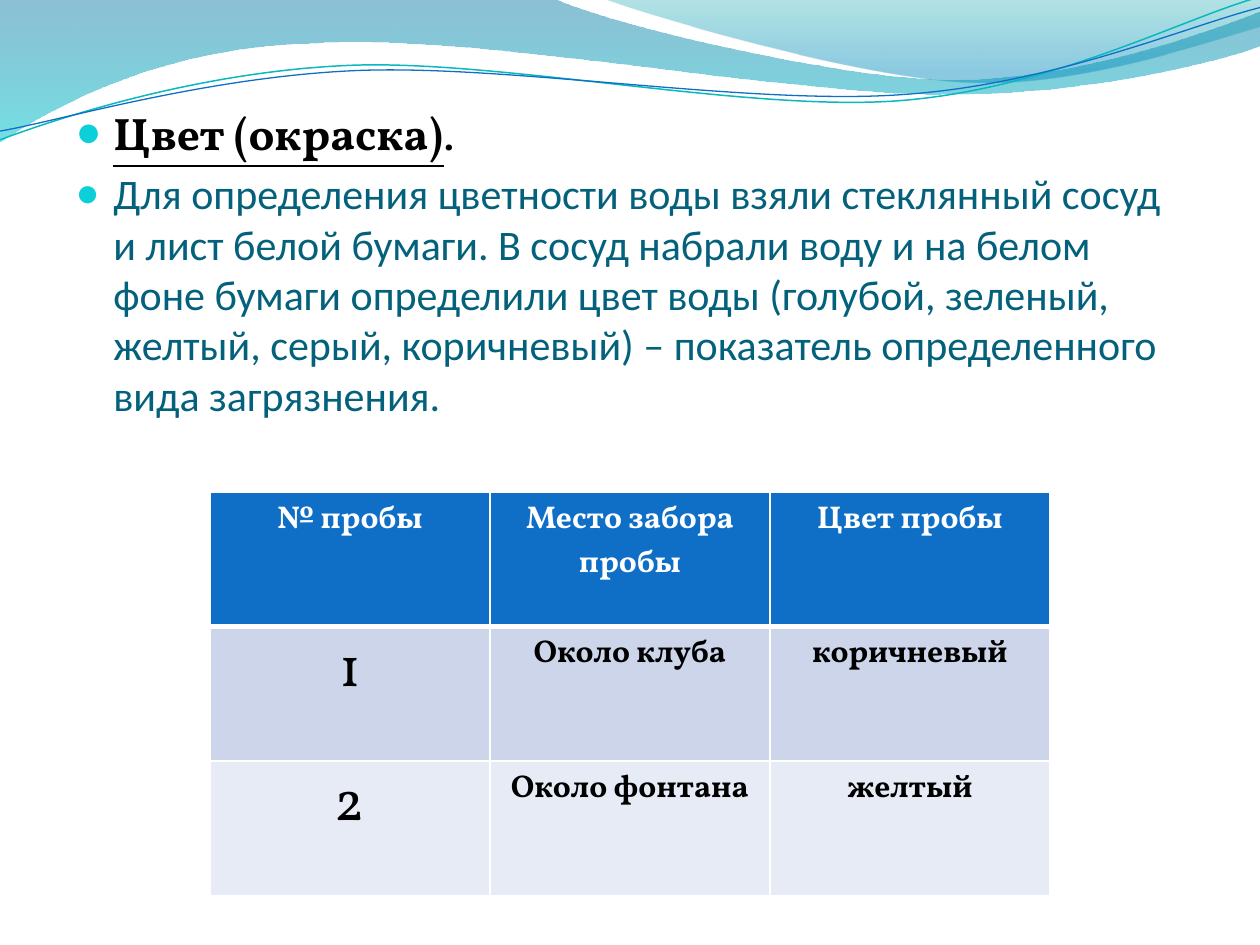
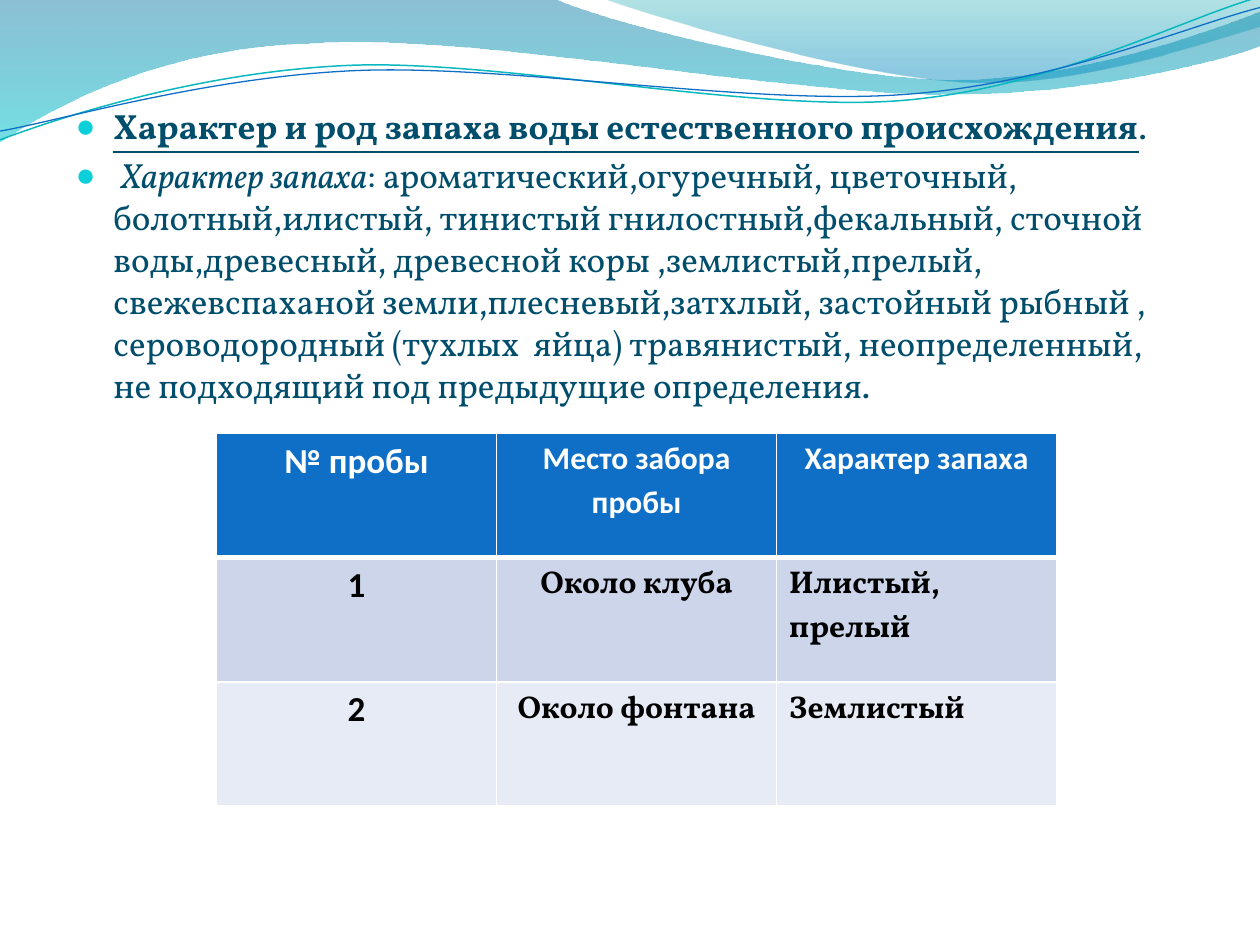
from dataclasses import dataclass

from lxml import etree
from pptx import Presentation
from pptx import util as u
from pptx.dml.color import RGBColor
from pptx.enum import text
from pptx.oxml import ns

Pt = u.Pt


@dataclass(frozen=True)
class Theme:
    black: str = "000000"
    white: str = "FFFFFF"
    teal: str = "04617B"
    deep_teal: str = "004E6C"
    bullet: str = "0BD0D9"
    header: str = "0F6FC6"
    bands: tuple = ("CCD5EA", "E7EBF5")
    serif: str = "Vollkorn"
    sans: str = "Calibri"
    heading: int = 26
    body: int = 24
    compact: int = 20
    cell: int = 18
    number: int = 32


THEME = Theme()


@dataclass(frozen=True)
class CellStyle:
    face: str = THEME.serif
    size: int = THEME.cell
    bold: bool = True
    align: text.PP_ALIGN = text.PP_ALIGN.CENTER
    tight: bool = False


LABEL = CellStyle()
LEFT_LABEL = CellStyle(align=text.PP_ALIGN.LEFT)
BIG_NUMBER = CellStyle(size=THEME.number, bold=False)
SANS_LABEL = CellStyle(face=THEME.sans, tight=True)
SANS_NUMBER = CellStyle(face=THEME.sans, size=THEME.compact, tight=True)

BROAD_WAVE = [
    [(0, 0)],
    [(316.8, -0.7)],
    [(342.7, 12.2), (478.1, 45.4), (545.8, 45.4)],
    [(614.2, 45.4), (689.8, 18.7), (720, 6.5)],
    [(720.7, 25.9)],
    [(707.8, 31.7), (626.4, 54.7), (537.1, 54)],
    [(447.8, 54), (275, 20.2), (185, 24.5)],
    [(92.9, 25.9), (33.1, 59.8), (-0.7, 81.4)],
    [(0, 0)],
]
CORNER_WAVE = [
    [(344.9, -0.7)],
    [(366.5, 7.9), (491, 44.6), (553.7, 46.8)],
    [(616.3, 49.7), (691.9, 23), (720, 15.1)],
    [(720, 0)],
    [(344.9, -0.7)],
]
TEAL_STRAND = [
    [(0, 79.9)],
    [(34.6, 67), (113.8, 41), (199.4, 37.4)],
    [(284.4, 33.8), (427, 64.1), (513.4, 57.6)],
    [(599.8, 51.1), (675.4, 10.8), (718.6, -1.4)],
]
BLUE_STRAND = [
    [(0, 74.9)],
    [(33.8, 69.1), (118.1, 43.9), (203.8, 40.3)],
    [(290.2, 36.7), (429.8, 60.5), (516.2, 54)],
    [(601.9, 48.2), (677.5, 15.1), (720, 4.3)],
]


class Deck:
    def __init__(self, theme):
        self.theme = theme
        self.prs = Presentation()
        self.prs.slide_width, self.prs.slide_height = Pt(720), Pt(540)
        self.slide = None

    def new_slide(self):
        self.slide = self.prs.slides.add_slide(self.prs.slide_layouts[1])
        title = self.slide.shapes.title.element
        title.getparent().remove(title)

    def outline(self, segments, closed):
        start, *rest = [(Pt(x), Pt(y)) for segment in segments for x, y in segment]
        builder = self.slide.shapes.build_freeform(*start, scale=1.0)
        builder.add_line_segments(rest, close=closed)
        wave = builder.convert_to_shape()
        wave.shadow.inherit = False
        steps = iter(list(wave.element.spPr.iter(ns.qn("a:lnTo"))))
        for segment in segments[1:]:
            first, *others = [next(steps) for _ in segment]
            if others:
                first.tag = ns.qn("a:cubicBezTo")
                for other in others:
                    first.append(other[0])
                    other.getparent().remove(other)
        return wave

    def share(self, wave):
        shared = self.prs.slide_master.shapes.element
        wave.element.nvSpPr.cNvPr.set("id", str(100 + len(shared)))
        shared.append(wave.element)

    def wave(self, segments, stops):
        wave = self.outline(segments, True)
        wave.line.fill.background()
        wave.fill.gradient()
        wave.fill.gradient_angle = 270
        for stop, (position, color, _) in zip(wave.fill.gradient_stops, stops):
            stop.position = position
            stop.color.rgb = RGBColor.from_string(color)
        tints = wave.element.spPr.iter(ns.qn("a:srgbClr"))
        for tint, (_, _, opacity) in zip(list(tints), stops):
            etree.SubElement(tint, ns.qn("a:alpha"), val=str(opacity * 1000))
        self.share(wave)

    def strand(self, segments, color, width):
        strand = self.outline(segments, False)
        strand.fill.background()
        strand.line.color.rgb = RGBColor.from_string(color)
        strand.line.width = Pt(width)
        self.share(strand)

    def font(self, paragraph, face, size, color):
        paragraph.font.name = face
        paragraph.font.size = Pt(size)
        paragraph.font.color.rgb = RGBColor.from_string(color)

    def bullet(self, paragraph):
        props = paragraph._p.get_or_add_pPr()
        props.set("marL", str(Pt(21.6)))
        props.set("indent", str(-Pt(21.6)))
        color = etree.SubElement(props, ns.qn("a:buClr"))
        etree.SubElement(color, ns.qn("a:srgbClr"), val=self.theme.bullet)
        etree.SubElement(props, ns.qn("a:buSzPct"), val="95000")
        etree.SubElement(props, ns.qn("a:buChar"), char="●")

    def body(self, items):
        body = self.slide.placeholders[1]
        body.left, body.top, body.width, body.height = Pt(36), Pt(56.2), Pt(648), Pt(442)
        frame = body.text_frame
        frame.auto_size = text.MSO_AUTO_SIZE.NONE
        for index, (face, size, color, runs) in enumerate(items):
            paragraph = frame.add_paragraph() if index else frame.paragraphs[0]
            self.bullet(paragraph)
            self.font(paragraph, face, size, color)
            for words, *marks in runs:
                run = paragraph.add_run()
                run.text = words
                for mark in marks:
                    setattr(run.font, mark, True)

    def table(self, left, top, row_height, rows):
        columns, column_width = len(rows[0]), 160
        table = self.slide.shapes.add_table(
            len(rows), columns, Pt(left), Pt(top),
            Pt(column_width * columns), Pt(row_height * len(rows))).table
        for r, row in enumerate(rows):
            fill = self.theme.bands[(r - 1) % 2] if r else self.theme.header
            color = self.theme.black if r else self.theme.white
            top_width, bottom_width = (3 if r == 1 else 1), (1 if r else 3)
            for c, (words, style) in enumerate(row):
                cell = table.cell(r, c)
                self.borders(cell, L=1, R=1, T=top_width, B=bottom_width)
                self.cell(cell, words, style, fill, color)

    def borders(self, cell, **widths):
        props = cell._tc.get_or_add_tcPr()
        for side, width in widths.items():
            line = etree.SubElement(props, ns.qn(f"a:ln{side}"), w=str(Pt(width)))
            paint = etree.SubElement(line, ns.qn("a:solidFill"))
            etree.SubElement(paint, ns.qn("a:srgbClr"), val=self.theme.white)

    def cell(self, cell, words, style, fill, color):
        cell.fill.solid()
        cell.fill.fore_color.rgb = RGBColor.from_string(fill)
        paragraph = cell.text_frame.paragraphs[0]
        paragraph.alignment = style.align
        if style.tight:
            cell.margin_left = cell.margin_right = Pt(5)
            cell.margin_top = cell.margin_bottom = 0
            paragraph.line_spacing = 1.15
        self.font(paragraph, style.face, style.size, color)
        paragraph.font.bold = style.bold
        run = paragraph.add_run()
        run.text = words
        run.font.bold = style.bold


def main():
    deck = Deck(THEME)

    deck.new_slide()
    deck.wave(BROAD_WAVE, [(0, "0074A1", 45), (1, "00C6CF", 55)])
    deck.wave(CORNER_WAVE, [(0, "00A1A9", 30), (0.8, "008BBF", 45)])
    deck.strand(TEAL_STRAND, "0AB8BF", 0.85)
    deck.strand(BLUE_STRAND, THEME.header, 0.75)
    deck.body([
        (THEME.serif, THEME.heading, THEME.black,
         [("Цвет (окраска)", "bold", "underline"), (".",)]),
        (THEME.sans, THEME.body, THEME.teal,
         [("Для определения цветности воды взяли стеклянный сосуд и лист белой бумаги. "
           "В сосуд набрали воду и на белом фоне бумаги определили цвет воды (голубой, "
           "зеленый, желтый, серый, коричневый) – показатель определенного вида "
           "загрязнения.",)]),
    ])
    deck.table(120, 281.3, 76.8, [
        [("№ пробы", LABEL), ("Место забора пробы", LABEL), ("Цвет пробы", LABEL)],
        [("1", BIG_NUMBER), ("Около клуба", LABEL), ("коричневый", LABEL)],
        [("2", BIG_NUMBER), ("Около фонтана", LABEL), ("желтый", LABEL)],
    ])

    deck.new_slide()
    smell = (THEME.serif, THEME.compact, THEME.deep_teal)
    deck.body([
        (*smell, [("Характер и род запаха воды естественного происхождения",
                   "bold", "underline"), (".",)]),
        (*smell, [(" ",), ("Характер запаха", "italic"),
                  (": ароматический,огуречный, цветочный, болотный,илистый, тинистый "
                   "гнилостный,фекальный, сточной воды,древесный, древесной коры "
                   ",землистый,прелый, свежевспаханой земли,плесневый,затхлый, "
                   "застойный рыбный , сероводородный (тухлых  яйца) травянистый, "
                   "неопределенный, не подходящий под предыдущие определения.",)]),
    ])
    deck.table(123.8, 247.7, 71, [
        [("№ пробы", SANS_NUMBER), ("Место забора пробы", SANS_LABEL),
         ("Характер запаха", SANS_LABEL)],
        [("1", SANS_NUMBER), ("Около клуба", LABEL), ("Илистый, прелый", LEFT_LABEL)],
        [("2", SANS_NUMBER), ("Около фонтана", LABEL), ("Землистый", LEFT_LABEL)],
    ])

    deck.prs.save("out.pptx")


if __name__ == "__main__":
    main()
